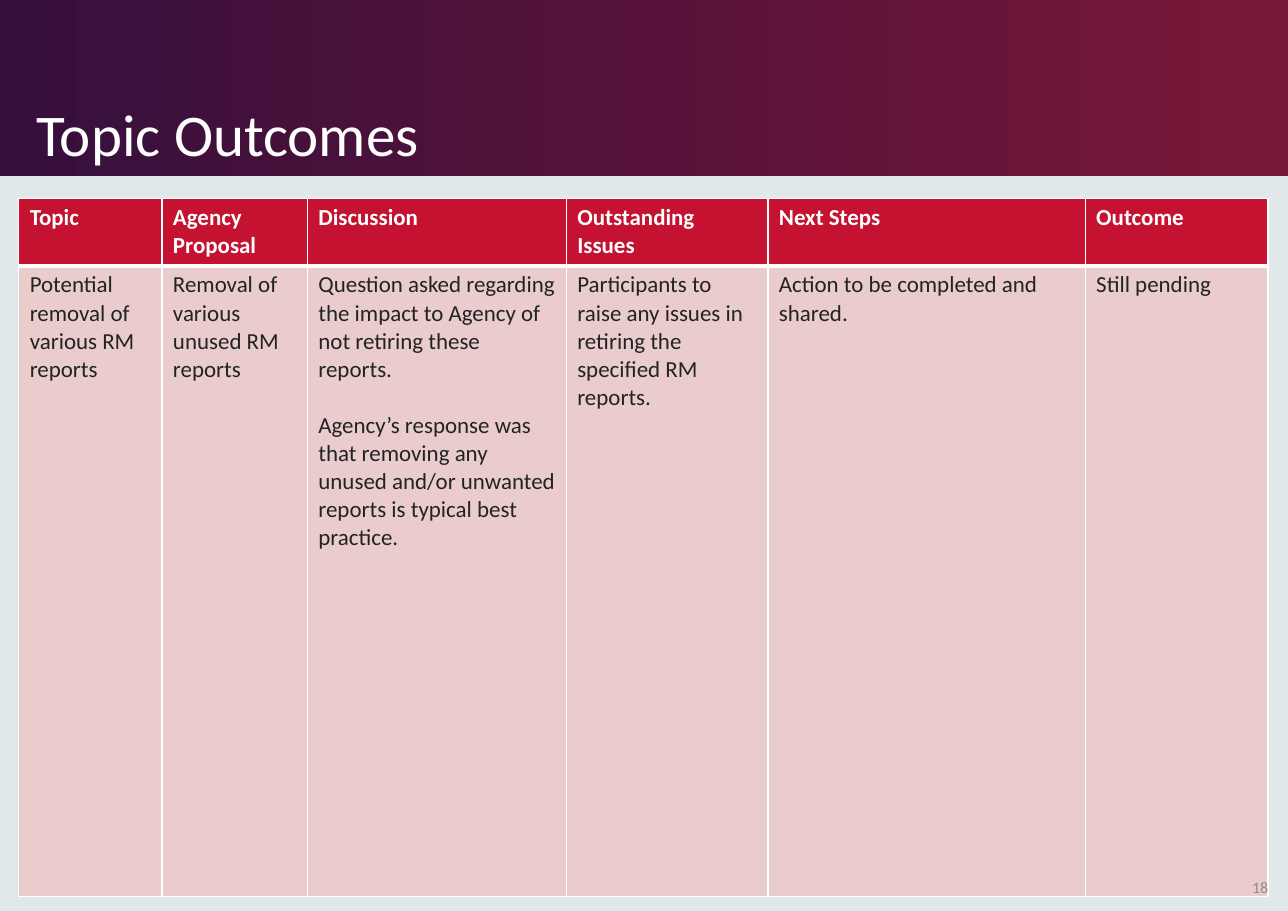
from lxml import etree
from pptx import Presentation
from pptx.dml.color import RGBColor
from pptx.enum.shapes import MSO_SHAPE
from pptx.enum.text import MSO_ANCHOR, MSO_AUTO_SIZE, PP_ALIGN
from pptx.oxml.ns import qn
from pptx.util import Inches, Pt

RECTANGLE = MSO_SHAPE.RECTANGLE
BOTTOM, MIDDLE = MSO_ANCHOR.BOTTOM, MSO_ANCHOR.MIDDLE
LEFT, RIGHT = PP_ALIGN.LEFT, PP_ALIGN.RIGHT
NO_AUTOFIT = MSO_AUTO_SIZE.NONE

WHITE = RGBColor(0xFF, 0xFF, 0xFF)
PALE = RGBColor(0xE0, 0xE8, 0xEA)
PURPLE = RGBColor(0x36, 0x0F, 0x3C)
MAROON = RGBColor(0x77, 0x17, 0x38)
RED = RGBColor(0xC4, 0x12, 0x30)
PINK = RGBColor(0xEA, 0xCC, 0xCD)
DARK = RGBColor(0x22, 0x23, 0x24)
GREY = RGBColor(0x8D, 0x8D, 0x8E)
FONT = "Calibri"

TITLE = "Topic Outcomes"
PAGE = "18"
COLUMNS = [
    ("Topic", 1.3, ["Potential removal of various RM reports"]),
    ("Agency Proposal", 1.32, ["Removal of various unused RM reports"]),
    ("Discussion", 2.35, [
        "Question asked regarding the impact to Agency of not retiring these reports.",
        "Agency’s response was that removing any unused and/or unwanted reports "
        "is typical best practice.",
    ]),
    ("Outstanding Issues", 1.83,
     ["Participants to raise any issues in retiring the specified RM reports."]),
    ("Next Steps", 2.88, ["Action to be completed and shared."]),
    ("Outcome", 1.66, ["Still pending"]),
]
ROW_HEIGHTS = [0.6, 5.73]


def style(p, size, color, bold=False):
    for r in p.runs:
        r.font.name = FONT
        r.font.size = Pt(size)
        r.font.bold = bold
        r.font.color.rgb = color


def set_borders(cell, top, bottom):
    tc_pr = cell._tc.get_or_add_tcPr()
    for side, width in (("L", 1), ("R", 1), ("T", top), ("B", bottom)):
        ln = etree.SubElement(tc_pr, qn(f"a:ln{side}"), w=str(Pt(width)))
        fill = etree.SubElement(ln, qn("a:solidFill"))
        etree.SubElement(fill, qn("a:srgbClr"), val=str(WHITE))


def fill_cell(cell, paragraphs, fill, color, bold, top, bottom):
    set_borders(cell, top, bottom)
    cell.fill.solid()
    cell.fill.fore_color.rgb = fill
    tf = cell.text_frame
    tf.text = "\n".join(paragraphs)
    for i, p in enumerate(tf.paragraphs):
        style(p, 15, color, bold)
        if i:
            p.space_before = Pt(18.3)


def add_band(slide):
    band = slide.shapes.add_shape(RECTANGLE, 0, 0, Inches(11.69), Inches(1.6))
    band.shadow.inherit = False
    band.line.fill.background()
    band.fill.gradient()
    band.fill.gradient_angle = 0
    stops = ((PURPLE, 0), (MAROON, 0.99))
    for stop, (color, position) in zip(band.fill.gradient_stops, stops):
        stop.color.rgb = color
        stop.position = position
    slide.shapes._spTree.insert(2, band._element)


def add_title(slide):
    title = slide.shapes.title
    title.left, title.top = Inches(0.23), Inches(0.16)
    title.width, title.height = Inches(8.63), Inches(1.43)
    tf = title.text_frame
    tf.text = TITLE
    tf.auto_size = NO_AUTOFIT
    tf.vertical_anchor = BOTTOM
    p = tf.paragraphs[0]
    p.alignment = LEFT
    p.line_spacing = 0.9
    style(p, 38.6, WHITE)


def add_outcomes(slide):
    table = slide.shapes.add_table(
        len(ROW_HEIGHTS), len(COLUMNS), Inches(0.17), Inches(1.8),
        Inches(sum(width for _, width, _ in COLUMNS)),
        Inches(sum(ROW_HEIGHTS))).table
    for row, height in zip(table.rows, ROW_HEIGHTS):
        row.height = Inches(height)
    for c, (heading, width, body) in enumerate(COLUMNS):
        table.columns[c].width = Inches(width)
        fill_cell(table.cell(0, c), [heading], RED, WHITE, True, 1, 3)
        fill_cell(table.cell(1, c), body, PINK, DARK, False, 3, 1)


def add_page_number(slide):
    box = slide.shapes.add_textbox(
        Inches(11.06), Inches(7.83), Inches(0.55), Inches(0.44))
    tf = box.text_frame
    tf.word_wrap = True
    tf.vertical_anchor = MIDDLE
    tf.text = PAGE
    p = tf.paragraphs[0]
    p.alignment = RIGHT
    style(p, 10.5, GREY)


def main():
    prs = Presentation()
    prs.slide_width, prs.slide_height = Inches(11.69), Inches(8.27)
    slide = prs.slides.add_slide(prs.slide_layouts[5])
    slide.background.fill.solid()
    slide.background.fill.fore_color.rgb = PALE
    add_band(slide)
    add_title(slide)
    add_outcomes(slide)
    add_page_number(slide)
    prs.save("out.pptx")


if __name__ == "__main__":
    main()
